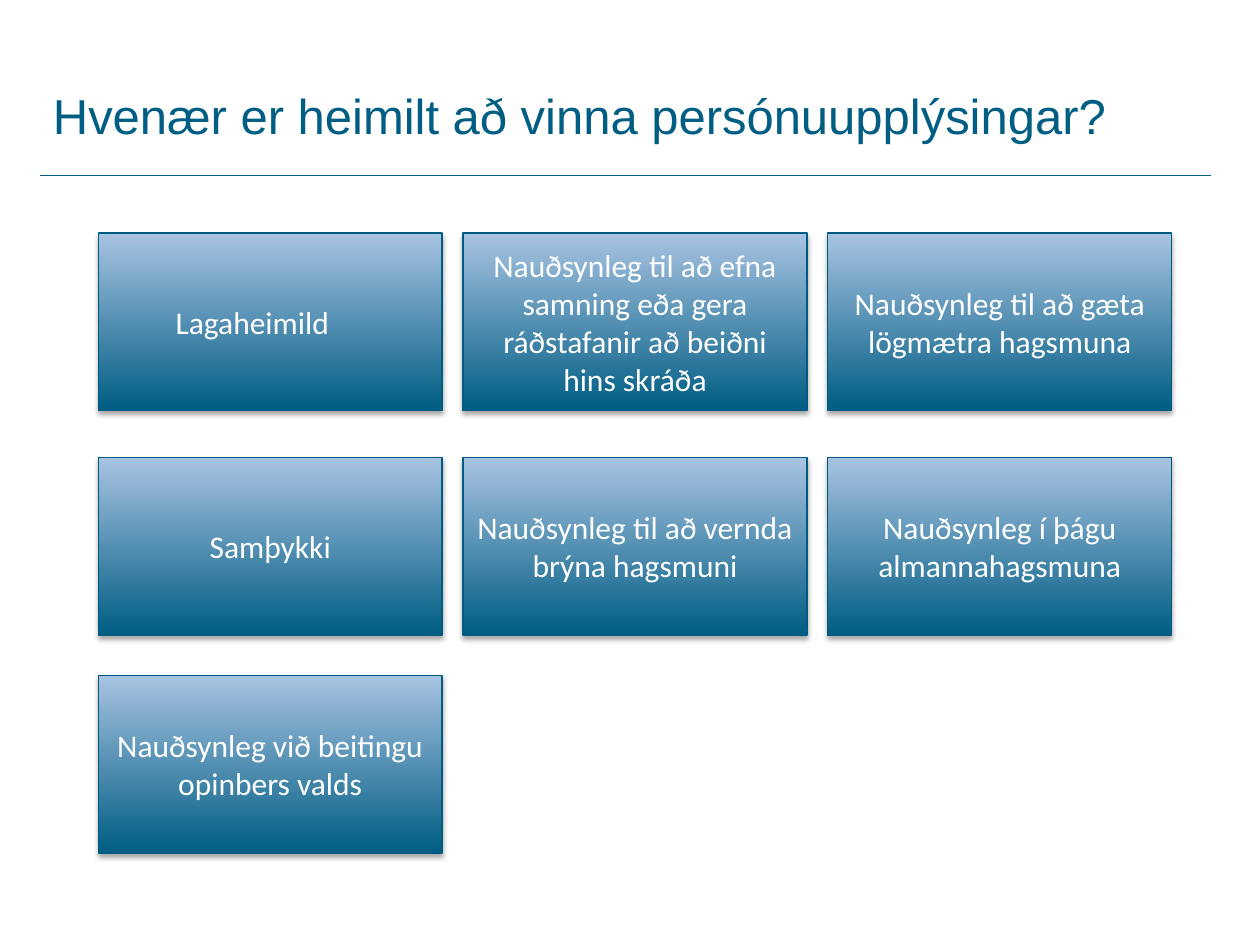
from lxml.etree import SubElement
from pptx import Presentation
from pptx.dml.color import RGBColor
from pptx.enum.shapes import MSO_CONNECTOR, MSO_SHAPE
from pptx.enum.text import MSO_ANCHOR, PP_ALIGN
from pptx.oxml.ns import qn
from pptx.util import Inches, Pt

TEAL = RGBColor(0x00, 0x5D, 0x83)
EDGE = RGBColor(0x00, 0x5B, 0x80)
SKY = RGBColor(0xA8, 0xC3, 0xE2)
WHITE = RGBColor(0xFF, 0xFF, 0xFF)


def write(shape, text, font="Calibri", size=18, color=WHITE, align=PP_ALIGN.CENTER):
    frame = shape.text_frame
    frame.word_wrap = True
    frame.vertical_anchor = MSO_ANCHOR.MIDDLE
    para = frame.paragraphs[0]
    para.alignment = align
    run = para.add_run()
    run.text = text
    run.font.name = font
    run.font.size = Pt(size)
    run.font.color.rgb = color


def shade(shape):
    shape.shadow.inherit = False
    effects = shape._element.spPr.find(qn("a:effectLst"))
    outer = SubElement(effects, qn("a:outerShdw"), blurRad="40000", dist="23000",
                       dir="5400000", rotWithShape="0")
    black = SubElement(outer, qn("a:srgbClr"), val="000000")
    SubElement(black, qn("a:alpha"), val="35000")


deck = Presentation()
deck.slide_width = Inches(10)
deck.slide_height = Inches(7.5)
slide = deck.slides.add_slide(deck.slide_layouts[5])

rule = slide.shapes.add_connector(MSO_CONNECTOR.STRAIGHT, Inches(0.32), Inches(1.39),
                                  Inches(9.61), Inches(1.39))
rule.line.color.rgb = TEAL
rule.line.width = Pt(0.35)
SubElement(rule._element.spPr, qn("a:effectLst"))

title = slide.shapes.title
title.left, title.top = Inches(0.32), Inches(0.61)
title.width, title.height = Inches(9.29), Inches(0.71)
write(title, "Hvenær er heimilt að vinna persónuupplýsingar?",
      font="Arial", size=28, color=TEAL, align=PP_ALIGN.LEFT)
title.text_frame.margin_bottom = Inches(0.15)

rows = [
    (1.85, ["Lagaheimild\t",
            "Nauðsynleg til að efna samning eða gera ráðstafanir að beiðni hins skráða",
            "Nauðsynleg til að gæta lögmætra hagsmuna"]),
    (3.63, ["Samþykki",
            "Nauðsynleg til að vernda brýna hagsmuni",
            "Nauðsynleg í þágu almannahagsmuna"]),
    (5.36, ["Nauðsynleg við beitingu opinbers valds"]),
]
for top, grounds in rows:
    for col, ground in enumerate(grounds):
        box = slide.shapes.add_shape(MSO_SHAPE.RECTANGLE, Inches(0.78 + col * 2.895),
                                     Inches(top), Inches(2.73), Inches(1.41))
        box.fill.gradient()
        box.fill.gradient_angle = 90
        for stop, color in zip(box.fill.gradient_stops, (TEAL, SKY)):
            stop.color.rgb = color
        box.line.color.rgb = EDGE
        box.line.width = Pt(0.75)
        shade(box)
        write(box, ground)

deck.save("out.pptx")
